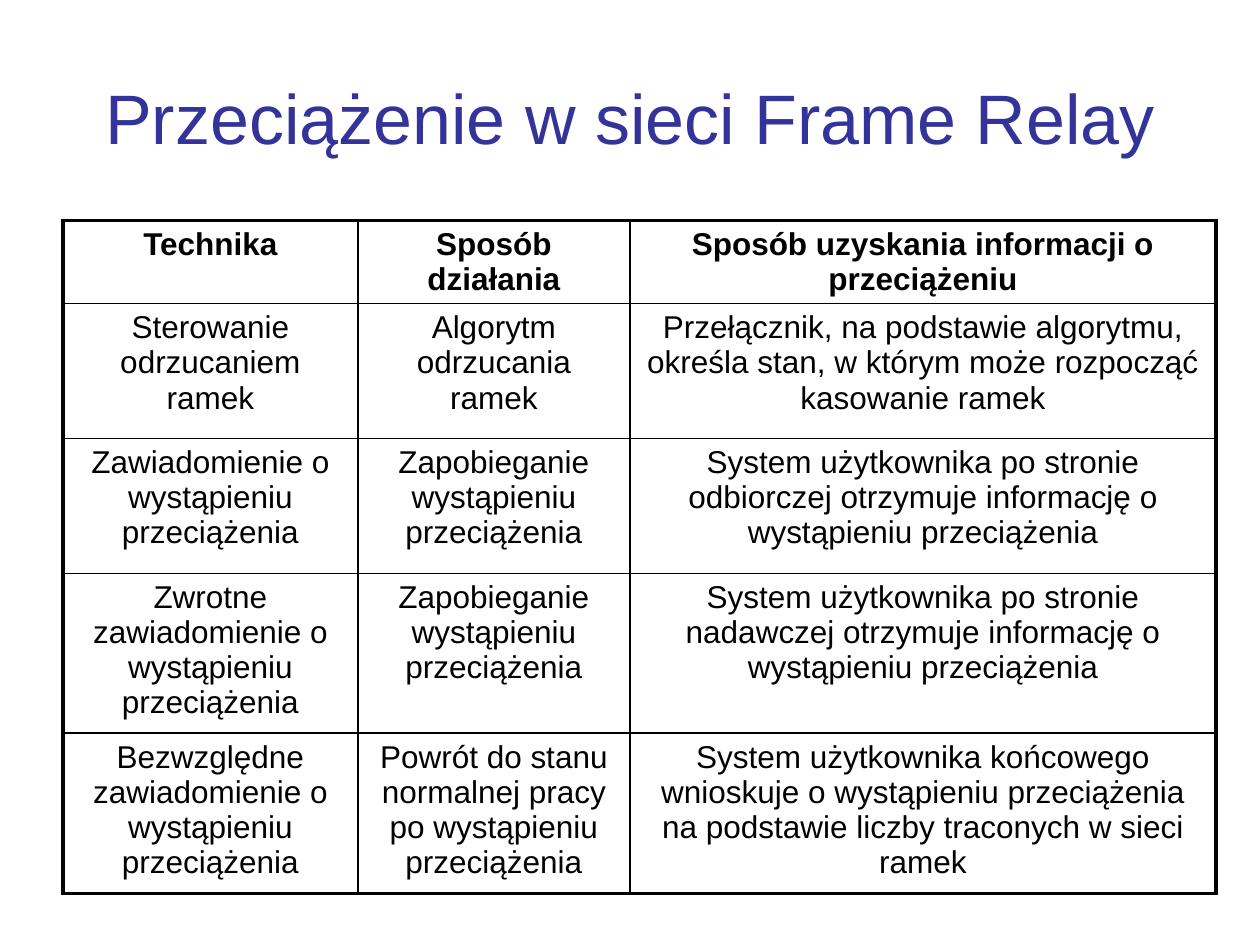
from pptx import Presentation
from pptx.dml.color import RGBColor
from pptx.enum.text import MSO_ANCHOR as Anchor, PP_ALIGN as Align
from pptx.oxml.ns import qn
from pptx.util import Inches, Pt
from lxml.etree import SubElement

COLORS = {"title": "333399", "text": "000000", "border": "000000"}
FONT = "Arial"
THIN, THICK = 1, 2.25
COLUMN_WIDTHS = [2.34, 2.16, 4.65]
ROW_HEIGHTS = [0.66, 1.07, 1.07, 1.27, 1.27]
ROWS = [
    ["Technika", "Sposób działania", "Sposób uzyskania informacji o przeciążeniu"],
    ["Sterowanie odrzucaniem ramek", "Algorytm odrzucania ramek",
     "Przełącznik, na podstawie algorytmu, określa stan, w którym może rozpocząć kasowanie ramek"],
    ["Zawiadomienie o wystąpieniu przeciążenia", "Zapobieganie wystąpieniu przeciążenia",
     "System użytkownika po stronie odbiorczej otrzymuje informację o wystąpieniu przeciążenia"],
    ["Zwrotne zawiadomienie o wystąpieniu przeciążenia", "Zapobieganie wystąpieniu przeciążenia",
     "System użytkownika po stronie nadawczej otrzymuje informację o wystąpieniu przeciążenia"],
    ["Bezwzględne zawiadomienie o wystąpieniu przeciążenia",
     "Powrót do stanu normalnej pracy po wystąpieniu przeciążenia",
     "System użytkownika końcowego wnioskuje o wystąpieniu przeciążenia "
     "na podstawie liczby traconych w sieci ramek"],
]


def write_text(frame, text, *, size, color, bold=False):
    """Write one centred paragraph into a text frame."""
    para = frame.paragraphs[0]
    para.alignment = Align.CENTER
    span = para.add_run()
    span.text = text
    span.font.name = FONT
    span.font.size = Pt(size)
    span.font.bold = bold
    span.font.color.rgb = RGBColor.from_string(color)


def set_borders(cell, widths):
    """Draw the cell borders, given widths in points by side."""
    properties = cell._tc.get_or_add_tcPr()
    for side, width in widths.items():
        line = SubElement(properties, qn(f"a:ln{side}"), w=str(Pt(width)))
        fill = SubElement(line, qn("a:solidFill"))
        SubElement(fill, qn("a:srgbClr"), val=COLORS["border"])


def add_title(page, text, left, top, width, height):
    """Place and format the title placeholder."""
    box = page.shapes.title
    box.left, box.top, box.width, box.height = map(Inches, (left, top, width, height))
    box.text_frame.word_wrap = True
    box.text_frame.vertical_anchor = Anchor.MIDDLE
    write_text(box.text_frame, text, size=40, color=COLORS["title"])


def add_technique_table(page, left, top):
    """Add the table of techniques with a thick outer frame."""
    last_row, last_column = len(ROWS) - 1, len(COLUMN_WIDTHS) - 1
    size = sum(COLUMN_WIDTHS), sum(ROW_HEIGHTS)
    table = page.shapes.add_table(
        len(ROWS), len(COLUMN_WIDTHS), *map(Inches, (left, top, *size))).table
    table.first_row = table.horz_banding = False
    for column, width in zip(table.columns, COLUMN_WIDTHS):
        column.width = Inches(width)
    for row, height in zip(table.rows, ROW_HEIGHTS):
        row.height = Inches(height)
    for r, texts in enumerate(ROWS):
        for c, text in enumerate(texts):
            cell = table.cell(r, c)
            write_text(cell.text_frame, text, size=18, color=COLORS["text"], bold=r == 0)
            outer = {"L": c == 0, "R": c == last_column, "T": r == 0, "B": r == last_row}
            set_borders(cell, {side: THICK if edge else THIN for side, edge in outer.items()})
            cell.fill.background()


def main():
    """Build and save the deck."""
    deck = Presentation()
    deck.slide_width, deck.slide_height = Inches(10), Inches(7.5)
    page = deck.slides.add_slide(deck.slide_layouts[5])
    add_title(page, "Przeciążenie w sieci Frame Relay", 0.5, 0.3, 9, 1.25)
    add_technique_table(page, 0.5, 1.75)
    deck.save("out.pptx")


if __name__ == "__main__":
    main()
